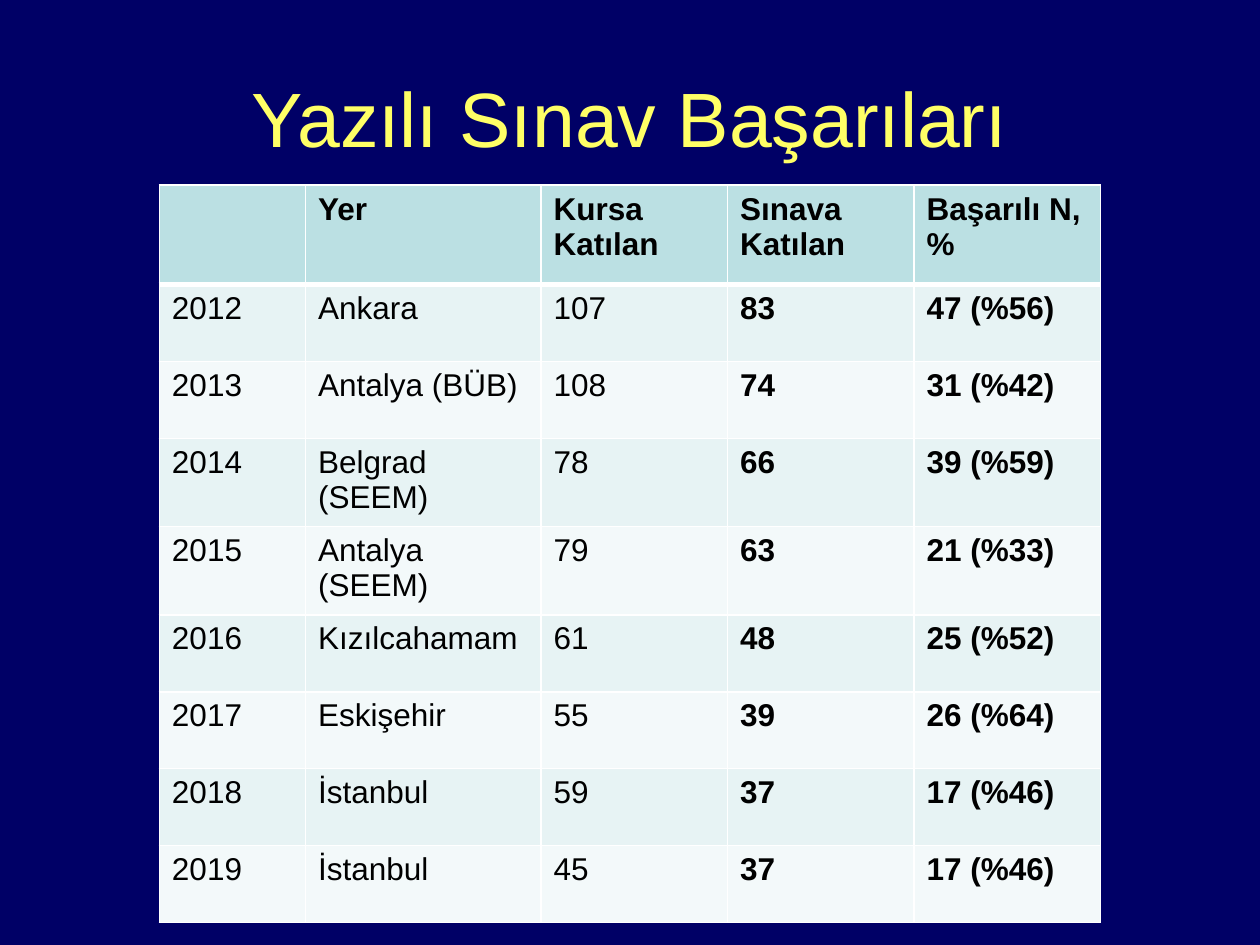
"""Build a slide with a table of written exam results by year."""
from pptx import Presentation
from pptx.dml.color import RGBColor as RGB
from pptx.enum.text import MSO_ANCHOR as Anchor, PP_ALIGN as Align
from pptx.oxml import parse_xml
from pptx.oxml.ns import nsdecls
from pptx.util import Inches as In, Pt

TITLE = "Yazılı Sınav Başarıları"
ROWS = [
    ("", "Yer", "Kursa Katılan", "Sınava Katılan", "Başarılı N, %"),
    ("2012", "Ankara", "107", "83", "47 (%56)"),
    ("2013", "Antalya (BÜB)", "108", "74", "31 (%42)"),
    ("2014", "Belgrad (SEEM)", "78", "66", "39 (%59)"),
    ("2015", "Antalya (SEEM)", "79", "63", "21 (%33)"),
    ("2016", "Kızılcahamam", "61", "48", "25 (%52)"),
    ("2017", "Eskişehir", "55", "39", "26 (%64)"),
    ("2018", "İstanbul", "59", "37", "17 (%46)"),
    ("2019", "İstanbul", "45", "37", "17 (%46)"),
]
HUES = {"back": "000066", "title": "FFFF66", "text": "000000", "rule": "FFFFFF",
        "head": "BBE0E3", "odd": "E7F3F4", "even": "F3F9FA"}
WIDE, HIGH = 10, 7.5
COLS = [1.16, 1.87, 1.48, 1.48, 1.48]
HEAD, BODY = 0.79, 0.61
TOP = 1.47
FIRST_BOLD = 3


def hue(name):
    return RGB.from_string(HUES[name])


def style(para, size, color, bold=False):
    font = para.font
    font.name, font.size, font.bold = "Arial", Pt(size), bold
    font.color.rgb = hue(color)


def border(cell, row):
    props = cell._tc.get_or_add_tcPr()
    sizes = {"L": 1, "R": 1, "T": 3 if row == 1 else 1, "B": 3 if row == 0 else 1}
    for side, size in sizes.items():
        props.append(parse_xml(
            f'<a:ln{side} {nsdecls("a")} w="{Pt(size)}"><a:solidFill>'
            f'<a:srgbClr val="{HUES["rule"]}"/></a:solidFill></a:ln{side}>'))


def add_title(slide):
    box = slide.shapes.add_textbox(In(0.5), In(0.3), In(WIDE - 1), In(1.25))
    frame = box.text_frame
    frame.word_wrap, frame.vertical_anchor = True, Anchor.MIDDLE
    para = frame.paragraphs[0]
    para.text, para.alignment = TITLE, Align.CENTER
    style(para, 44, "title")


def add_grid(slide):
    highs = [HEAD] + [BODY] * (len(ROWS) - 1)
    wide = sum(COLS)
    grid = slide.shapes.add_table(len(ROWS), len(COLS), In((WIDE - wide) / 2), In(TOP),
                                  In(wide), In(sum(highs))).table
    for col, size in zip(grid.columns, COLS):
        col.width = In(size)
    for r, (row, high) in enumerate(zip(ROWS, highs)):
        grid.rows[r].height = In(high)
        shade = "head" if r == 0 else "odd" if r % 2 else "even"
        for c, text in enumerate(row):
            cell = grid.cell(r, c)
            cell.text = text
            style(cell.text_frame.paragraphs[0], 18, "text", r == 0 or c >= FIRST_BOLD)
            border(cell, r)
            cell.fill.solid()
            cell.fill.fore_color.rgb = hue(shade)


def main():
    deck = Presentation()
    deck.slide_width, deck.slide_height = In(WIDE), In(HIGH)
    slide = deck.slides.add_slide(deck.slide_layouts[6])
    slide.background.fill.solid()
    slide.background.fill.fore_color.rgb = hue("back")
    add_title(slide)
    add_grid(slide)
    deck.save("out.pptx")


if __name__ == "__main__":
    main()
